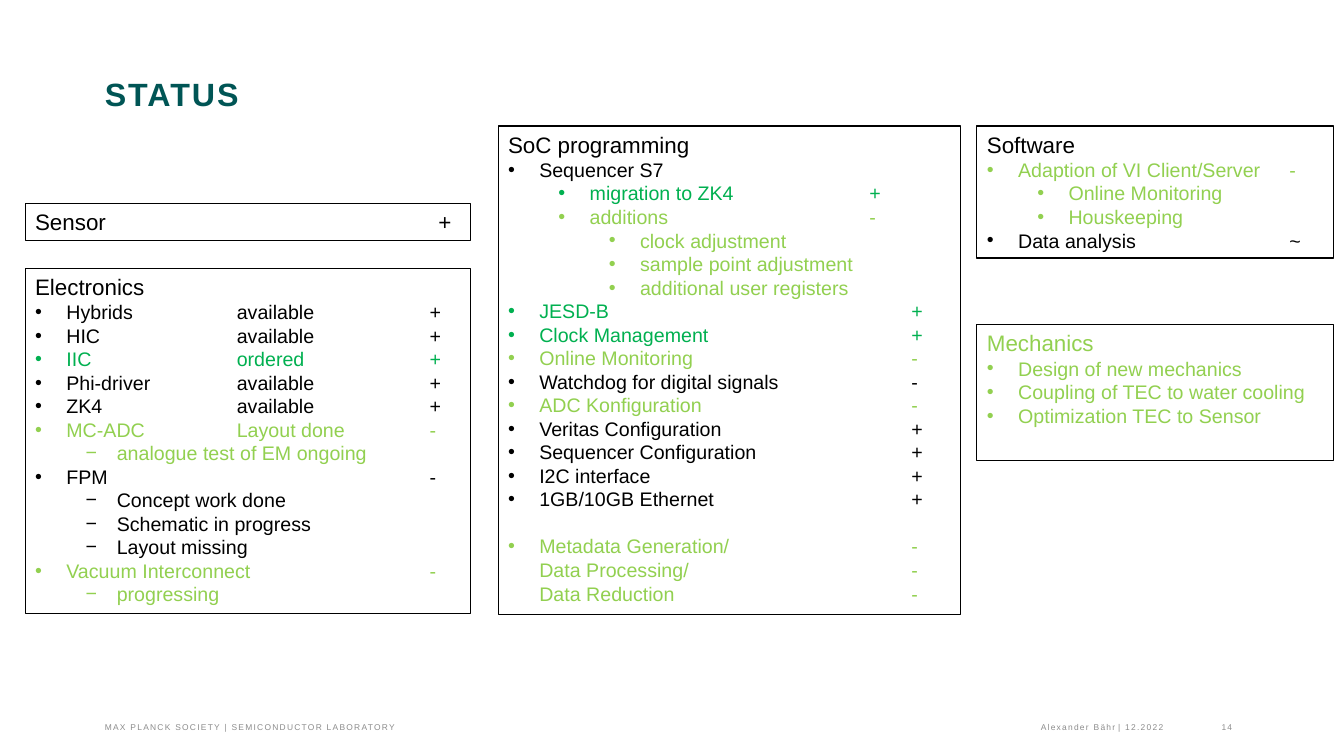
"""Build the project status slide with its five work package boxes."""
from lxml import etree
from pptx import Presentation
from pptx.dml.color import RGBColor
from pptx.enum.shapes import MSO_SHAPE
from pptx.enum.text import MSO_ANCHOR, PP_ALIGN
from pptx.oxml.ns import qn
from pptx.util import Inches, Pt

RECT = MSO_SHAPE.RECTANGLE
TOP, BOTTOM = MSO_ANCHOR.TOP, MSO_ANCHOR.BOTTOM
LEFT, RIGHT = PP_ALIGN.LEFT, PP_ALIGN.RIGHT

COLORS = {"black": "000000", "done": "00B050", "open": "92D050",
          "title": "005555", "footer": "8C8C8C"}
FONT = "Arial"
HEAD_SIZE, ITEM_SIZE = 16, 14
LINE_RATIO = 1.2
INDENT, LEVEL_STEP, TAB_STEP = 0.31, 0.5, 1

COLUMNS = {"left": (0.25, 4.42), "middle": (4.94, 4.59), "right": (9.69, 3.54)}

# column, top, height, heading, heading colour, items (level, colour, text)
BOXES = [
    ("left", 2.66, 3.43, "Electronics", "black", [
        (0, "black", "Hybrids\t\tavailable\t\t+"),
        (0, "black", "HIC\t\tavailable\t\t+"),
        (0, "done", "IIC\t\tordered\t\t+"),
        (0, "black", "Phi-driver\tavailable\t\t+"),
        (0, "black", "ZK4\t\tavailable\t\t+"),
        (0, "open", "MC-ADC\tLayout done\t-"),
        (1, "open", "analogue test of EM ongoing"),
        (0, "black", "FPM\t\t\t\t-"),
        (1, "black", "Concept work done"),
        (1, "black", "Schematic in progress"),
        (1, "black", "Layout missing"),
        (0, "open", "Vacuum Interconnect\t\t-"),
        (1, "open", "progressing"),
    ]),
    ("middle", 1.25, 4.85, "SoC programming", "black", [
        (0, "black", "Sequencer S7"),
        (1, "done", "migration to ZK4\t\t+"),
        (1, "open", "additions\t\t\t-"),
        (2, "open", "clock adjustment"),
        (2, "open", "sample point adjustment"),
        (2, "open", "additional user registers"),
        (0, "done", "JESD-B\t\t\t+"),
        (0, "done", "Clock Management\t\t\t+"),
        (0, "open", "Online Monitoring\t\t\t-"),
        (0, "black", "Watchdog for digital signals\t\t-"),
        (0, "open", "ADC Konfiguration\t\t\t-"),
        (0, "black", "Veritas Configuration\t\t+"),
        (0, "black", "Sequencer Configuration\t\t+"),
        (0, "black", "I2C interface\t\t\t+"),
        (0, "black", "1GB/10GB Ethernet\t\t+"),
        (0, "open", "Metadata Generation/\t\t-\vData Processing/\t\t\t-\v"
                    "Data Reduction\t\t\t-"),
    ]),
    ("right", 1.25, 1.31, "Software", "black", [
        (0, "open", "Adaption of VI Client/Server\t-"),
        (1, "open", "Online Monitoring"),
        (1, "open", "Houskeeping"),
        (0, "black", "Data analysis\t\t~"),
    ]),
    ("right", 3.22, 1.35, "Mechanics", "open", [
        (0, "open", "Design of new mechanics"),
        (0, "open", "Coupling of TEC to water cooling"),
        (0, "open", "Optimization TEC to Sensor"),
    ]),
    ("left", 2.02, 0.37, "Sensor\t\t\t\t+", "black", []),
]
DASHED_BOX, GAP_BEFORE = "Electronics", "Metadata"

FOOTER_TOP, FOOTER_HEIGHT = 7.06, 0.2
# left, width, right inset, alignment, text
FOOTERS = [
    (1.04, 2.93, 0, LEFT, "MAX PLANCK SOCIETY | SEMICONDUCTOR LABORATORY"),
    (3.97, 7.09, 0, RIGHT, "Alexander Bähr"),
    (11.09, 0.05, 0, LEFT, "|"),
    (11.16, 0.61, 0, LEFT, "12.2022"),
    (11.86, 0.44, 0.08, RIGHT, "14"),
]


def style(font, color, **values):
    """Apply a colour and any other font values."""
    font.color.rgb = RGBColor.from_string(COLORS[color])
    for name, value in {"name": FONT, **values}.items():
        setattr(font, name, value)


def add_label(slide, box, text, color, size, spacing, anchor=TOP, align=LEFT,
              inset=0, wrap=True, bold=False):
    """Add a plain letter-spaced text box and return its paragraph."""
    tf = slide.shapes.add_textbox(*map(Inches, box)).text_frame
    values = {"margin_left": 0, "margin_top": 0, "margin_bottom": 0,
              "margin_right": Inches(inset), "word_wrap": wrap,
              "vertical_anchor": anchor}
    for name, value in values.items():
        setattr(tf, name, value)
    p = tf.paragraphs[0]
    p.alignment = align
    r = p.add_run()
    r.text = text
    style(r.font, color, size=Pt(size), bold=bold)
    r.font._element.set("spc", str(round(spacing * 100)))
    return p


def add_line(p, text, color, size, level=0, bullet=None):
    """Fill one paragraph of a status box."""
    p.alignment, p.level = LEFT, level
    p.line_spacing = Pt(size * LINE_RATIO)
    pPr = p._p.get_or_add_pPr()
    pPr.set("defTabSz", str(Inches(TAB_STEP)))
    if bullet:
        pPr.set("marL", str(Inches(INDENT + level * LEVEL_STEP)))
        pPr.set("indent", str(-Inches(INDENT)))
        etree.SubElement(pPr, qn("a:buFont")).set("typeface", FONT)
        etree.SubElement(pPr, qn("a:buChar")).set("char", bullet)
    p.text = text
    for r in p.runs:
        style(r.font, color, size=Pt(size))


def add_box(slide, column, top, height, heading, color, items):
    """Add one outlined box with its heading and bulleted items."""
    left, width = COLUMNS[column]
    sp = slide.shapes.add_shape(RECT, *map(Inches, (left, top, width, height)))
    sp.shadow.inherit = False
    sp.fill.background()
    sp.line.color.rgb = RGBColor.from_string(COLORS["black"])
    sp.line.width = Pt(0.75)
    tf = sp.text_frame
    tf.word_wrap, tf.vertical_anchor = True, TOP
    add_line(tf.paragraphs[0], heading, color, HEAD_SIZE)
    for level, item_color, text in items:
        bullet = "−" if heading == DASHED_BOX and level else "•"
        p = tf.add_paragraph()
        if text.startswith(GAP_BEFORE):
            p.space_before = Pt(ITEM_SIZE * LINE_RATIO)
        add_line(p, text, item_color, ITEM_SIZE, level, bullet)


def main():
    prs = Presentation()
    prs.slide_width, prs.slide_height = Inches(13.33), Inches(7.5)
    slide = prs.slides.add_slide(prs.slide_layouts[6])
    for left, width, inset, align, text in FOOTERS:
        add_label(slide, (left, FOOTER_TOP, width, FOOTER_HEIGHT), text,
                  "footer", 6, 0.9, BOTTOM, align, inset)
    p = add_label(slide, (1.04, 0.76, 11.26, 1.05), "STATUS", "title", 23, 1.4,
                  bold=True)
    p.line_spacing = Pt(26)
    for box in BOXES:
        add_box(slide, *box)
    prs.save("out.pptx")


if __name__ == "__main__":
    main()
